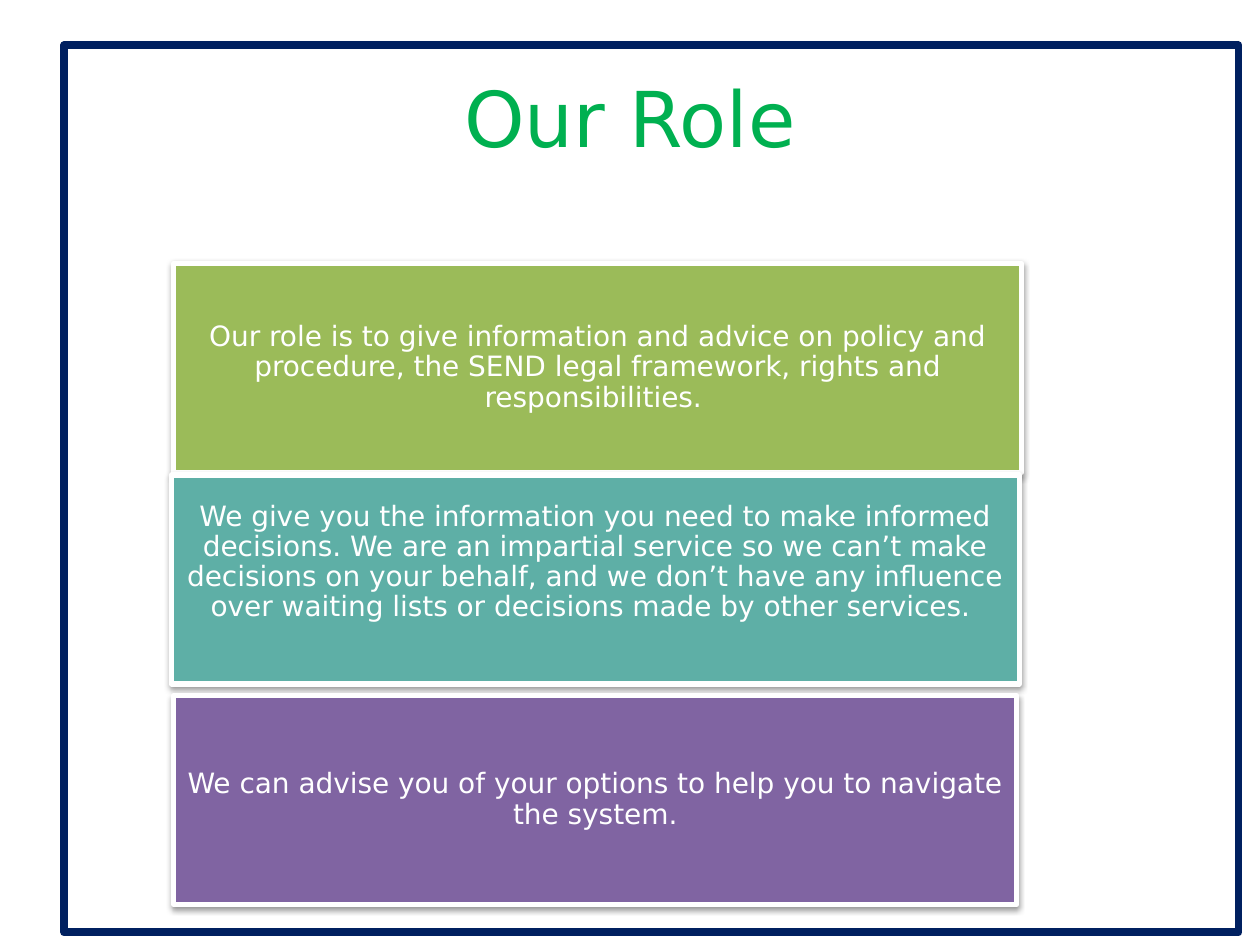
import pptx
import pptx.util
import pptx.dml.color
import pptx.enum.shapes
import pptx.enum.text
import pptx.oxml
import pptx.oxml.ns

FONT = "DejaVu Sans"
SHADOW = (
    '<a:effectLst xmlns:a="http://schemas.openxmlformats.org/drawingml/2006/main">'
    '<a:outerShdw blurRad="40000" dist="20000" dir="5400000" rotWithShape="0">'
    '<a:srgbClr val="000000"><a:alpha val="38000"/></a:srgbClr>'
    '</a:outerShdw></a:effectLst>'
)


def rgb(value):
    return pptx.dml.color.RGBColor.from_string(value)


def inches(box):
    return [pptx.util.Inches(v) for v in box]


def add_rect(s, box, fill, line, width):
    sp = s.shapes.add_shape(pptx.enum.shapes.MSO_SHAPE.RECTANGLE, *inches(box))
    sp.shadow.inherit = False
    sp.fill.solid()
    sp.fill.fore_color.rgb = rgb(fill)
    sp.line.color.rgb = rgb(line)
    sp.line.width = pptx.util.Pt(width)
    return sp


def write(sp, text, size, color):
    tf = sp.text_frame
    tf.word_wrap = True
    tf.vertical_anchor = pptx.enum.text.MSO_ANCHOR.MIDDLE
    p = tf.paragraphs[0]
    p.text = text
    p.alignment = pptx.enum.text.PP_ALIGN.CENTER
    p.font.name = FONT
    p.font.size = pptx.util.Pt(size)
    p.font.color.rgb = rgb(color)
    return tf


def add_title(s, box, text):
    write(s.shapes.add_textbox(*inches(box)), text, 44, "00B050")


def add_card(s, box, text, fill, lift):
    sp = add_rect(s, box, fill, "FFFFFF", 3)
    pr = sp._element.spPr
    pr.replace(pr.find(pptx.oxml.ns.qn("a:effectLst")), pptx.oxml.parse_xml(SHADOW))
    tf = write(sp, text, 16, "FFFFFF")
    tf.margin_left = tf.margin_right = tf.margin_top = pptx.util.Inches(0.04)
    tf.margin_bottom = pptx.util.Inches(0.04 + lift)
    tf.paragraphs[0].line_spacing = 0.9
    tf.paragraphs[0].space_after = pptx.util.Pt(5.6)


def add_cards(s, box, cards):
    left, top, width, height = box
    for dx, dy, dw, fill, lift, text in cards:
        add_card(s, (left + dx, top + dy, width + dw, height), text, fill, lift)


def main():
    prs = pptx.Presentation()
    prs.slide_width, prs.slide_height = inches((10, 7.5))
    s = prs.slides.add_slide(prs.slide_layouts[6])
    add_rect(s, (0.51, 0.36, 9.32, 7.04), "FFFFFF", "002060", 4.5)
    add_title(s, (0.5, 0.3, 9, 1.25), "Our Role")
    add_cards(s, (1.38, 2.09, 6.73, 1.66), [
        (0, 0, 0, "9BBB59", 0,
         "Our role is to give information and advice on policy and procedure, "
         "the SEND legal framework, rights and responsibilities. "),
        (-0.02, 1.68, 0, "5EAFA6", 0.27,
         "We give you the information you need to make informed decisions. "
         "We are an impartial service so we can’t make decisions on your behalf, "
         "and we don’t have any influence over waiting lists or decisions made "
         "by other services. "),
        (0, 3.43, -0.04, "8064A2", 0,
         "We can advise you of your options to help you to navigate the system."),
    ])
    prs.save("out.pptx")


if __name__ == "__main__":
    main()
